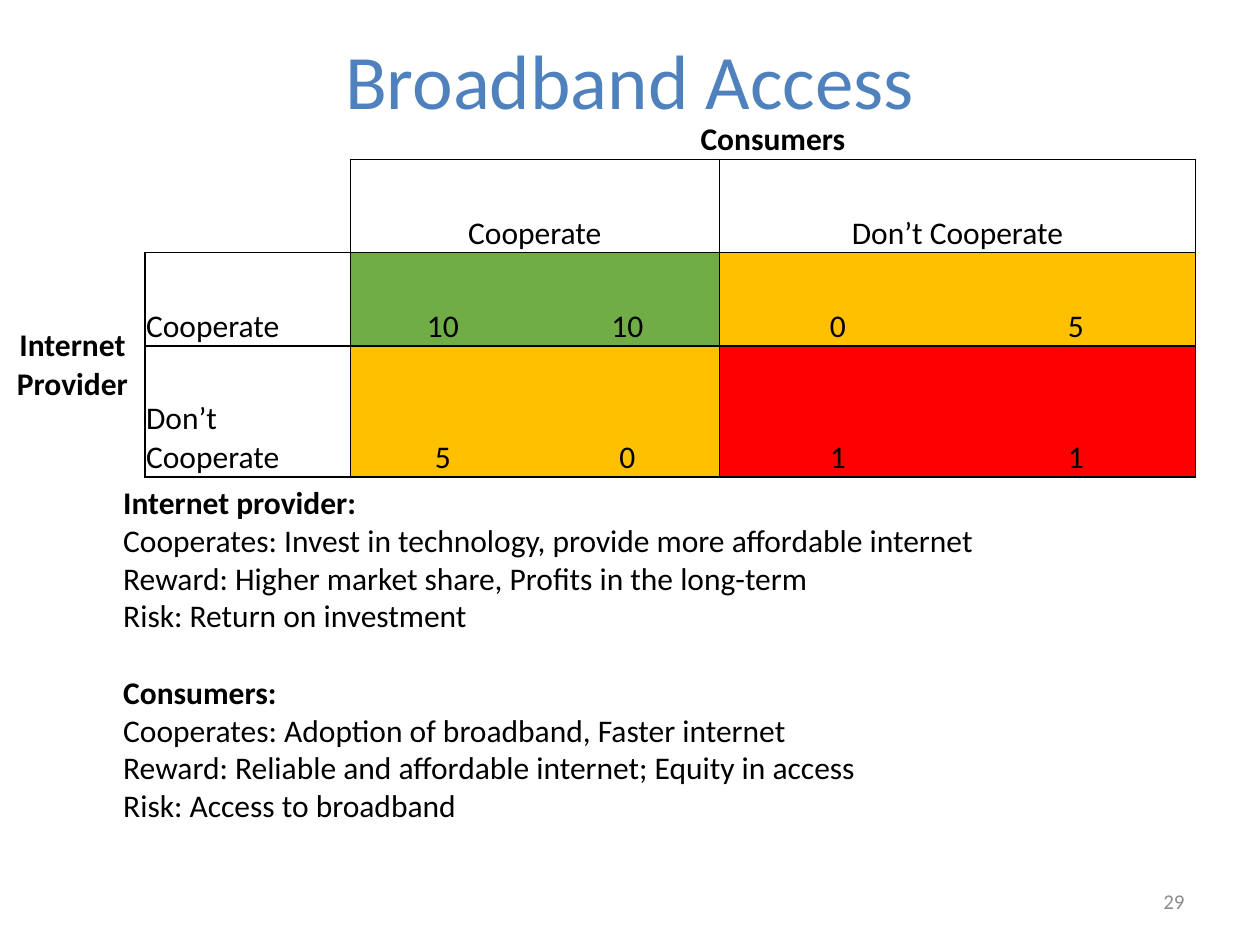
from lxml.etree import SubElement
from pptx import Presentation
from pptx.dml.color import RGBColor
from pptx.enum.text import MSO_ANCHOR as Anchor, PP_ALIGN as Align
from pptx.oxml.ns import qn
from pptx.util import Inches, Pt

WIDTH, HEIGHT = 10, 7.5
FONT = "Calibri"
BLACK, BLUE, GRAY = "000000", "4F81BD", "8C8C8C"
GREEN, AMBER, RED = "70AD47", "FFC000", "FF0000"

COLUMNS = [1.15, 1.63, 1.47, 1.46, 1.88, 1.9]
ROWS = [0.74, 0.74, 0.74, 1.04]
LABELS = [
    ["", "", "Consumers", "", "", ""],
    ["", "", "Cooperate", "", "Don’t Cooperate", ""],
    ["Internet Provider", "Cooperate", "10", "10", "0", "5"],
    ["", "Don’t Cooperate", "5", "0", "1", "1"],
]
MERGES = [((0, 2), (0, 5)), ((1, 2), (1, 3)), ((1, 4), (1, 5)), ((2, 0), (3, 0))]
BORDERS = [
    ["", "", "B", "B", "B", "B"],
    ["", "RB", "LTRB", "TRB", "LTRB", "TRB"],
    ["R", "LTRB", "LTB", "TRB", "LTB", "TRB"],
    ["R", "LTRB", "LTB", "TRB", "LTB", "TRB"],
]
FILLS = {(2, 2): GREEN, (2, 4): AMBER, (3, 2): AMBER, (3, 4): RED}

NOTES = [
    ("Internet provider:", [
        "Cooperates: Invest in technology, provide more affordable internet",
        "Reward: Higher market share, Profits in the long-term",
        "Risk: Return on investment",
    ]),
    ("Consumers:", [
        "Cooperates: Adoption of broadband, Faster internet",
        "Reward: Reliable and affordable internet; Equity in access",
        "Risk: Access to broadband",
    ]),
]


def color(value):
    return RGBColor.from_string(value)


def style(paragraph, size, shade=BLACK, align=Align.LEFT, bold=False):
    paragraph.alignment = align
    font = paragraph.font
    font.name, font.size, font.bold = FONT, Pt(size), bold
    font.color.rgb = color(shade)


def add_text_frame(slide, box, anchor=Anchor.TOP):
    frame = slide.shapes.add_textbox(*map(Inches, box)).text_frame
    frame.word_wrap = True
    frame.vertical_anchor = anchor
    return frame


def add_line(slide, box, text, size, shade, align):
    paragraph = add_text_frame(slide, box, Anchor.MIDDLE).paragraphs[0]
    paragraph.text = text
    style(paragraph, size, shade, align)


def set_borders(cell, sides):
    properties = cell._tc.get_or_add_tcPr()
    for index, side in enumerate("LRTB"):
        line = SubElement(properties, qn(f"a:ln{side}"), w=str(Pt(1)))
        if side in sides:
            fill = SubElement(line, qn("a:solidFill"))
            SubElement(fill, qn("a:srgbClr"), val=BLACK)
        else:
            SubElement(line, qn("a:noFill"))
        properties.insert(index, line)


def fill_cell(cell, row, column):
    cell.margin_left = cell.margin_right = cell.margin_top = Inches(0.01)
    cell.margin_bottom = 0
    side_label = column == 0
    cell.vertical_anchor = Anchor.MIDDLE if side_label else Anchor.BOTTOM
    shade = FILLS.get((row, column - column % 2))
    if shade:
        cell.fill.solid()
        cell.fill.fore_color.rgb = color(shade)
    else:
        cell.fill.background()
    set_borders(cell, BORDERS[row][column])
    cell.text = LABELS[row][column]
    align = Align.LEFT if column == 1 else Align.CENTER
    style(cell.text_frame.paragraphs[0], 18, align=align, bold=side_label or row == 0)


def add_payoff_table(slide, left, top):
    box = map(Inches, (left, top, sum(COLUMNS), sum(ROWS)))
    table = slide.shapes.add_table(len(ROWS), len(COLUMNS), *box).table
    table.first_row = table.horz_banding = False
    for column, width in zip(table.columns, COLUMNS):
        column.width = Inches(width)
    for row, height in zip(table.rows, ROWS):
        row.height = Inches(height)
    for row in range(len(ROWS)):
        for column in range(len(COLUMNS)):
            fill_cell(table.cell(row, column), row, column)
    for first, last in MERGES:
        table.cell(*first).merge(table.cell(*last))


def add_notes(slide, box):
    frame = add_text_frame(slide, box)
    for group, (heading, lines) in enumerate(NOTES):
        paragraph = frame.add_paragraph() if group else frame.paragraphs[0]
        paragraph.text = heading
        style(paragraph, 18, bold=True)
        if group:
            paragraph.space_before = Pt(22)
        for line in lines:
            paragraph = frame.add_paragraph()
            paragraph.text = line
            style(paragraph, 18)


def main():
    presentation = Presentation()
    presentation.slide_width, presentation.slide_height = Inches(WIDTH), Inches(HEIGHT)
    slide = presentation.slides.add_slide(presentation.slide_layouts[6])
    margin = WIDTH * 0.05
    table_top = HEIGHT * 0.07
    title_box = (margin, 0, WIDTH - 2 * margin, HEIGHT / 6)
    add_line(slide, title_box, "Broadband Access", 44, BLUE, Align.CENTER)
    number_width = WIDTH * 0.23
    number_box = (WIDTH - margin - number_width, 6.95, number_width, 0.4)
    add_line(slide, number_box, "29", 12, GRAY, Align.RIGHT)
    add_payoff_table(slide, 0, table_top)
    add_notes(slide, (0.88, table_top + sum(ROWS), 7.74, 3.43))
    presentation.save("out.pptx")


if __name__ == "__main__":
    main()
